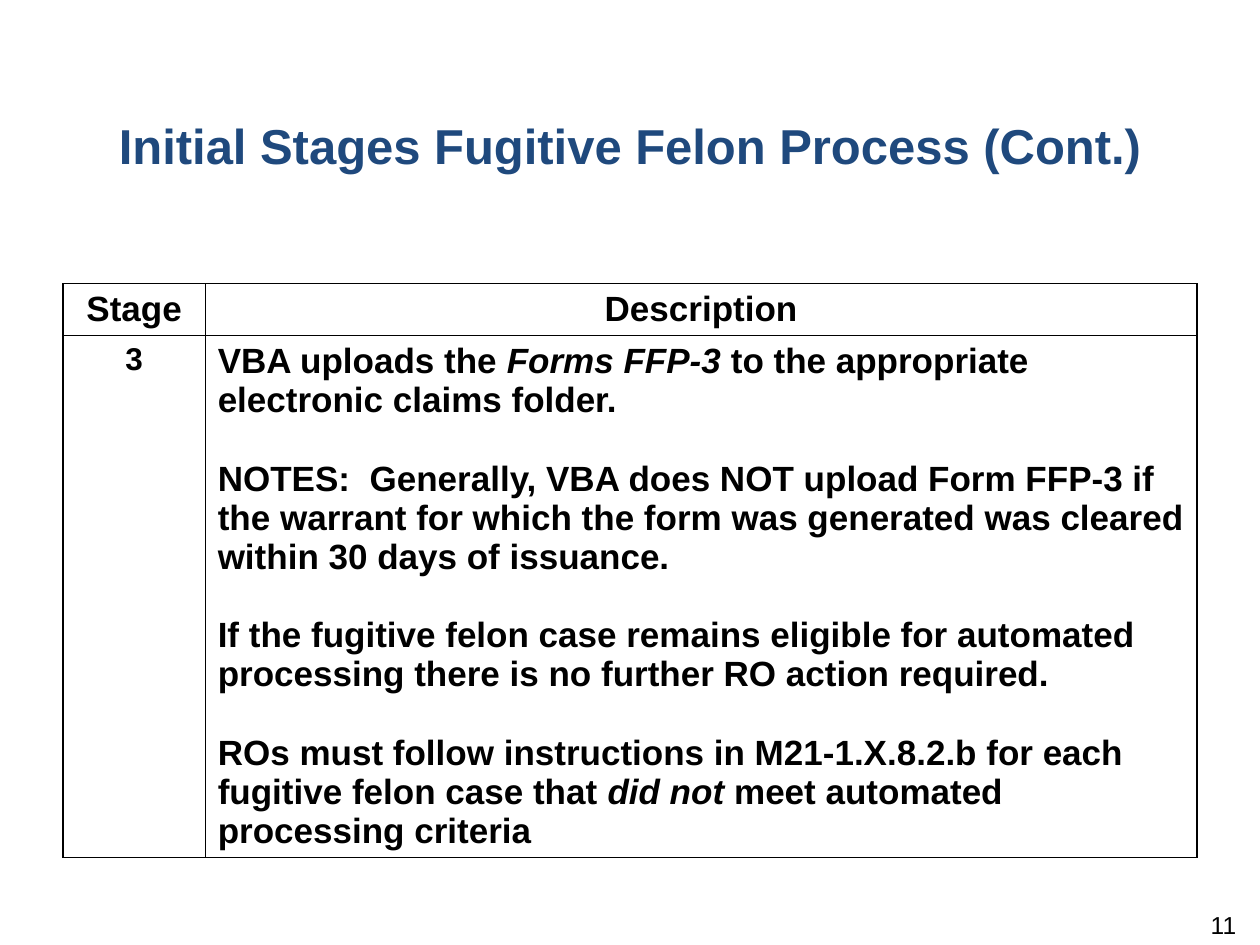
"""Build the slide on the third stage of the fugitive felon process."""
from lxml.etree import SubElement
from pptx import Presentation
from pptx.dml.color import RGBColor
from pptx.enum.text import MSO_ANCHOR, PP_ALIGN
from pptx.oxml.ns import qn
from pptx.util import Cm, Pt

NAVY = RGBColor(0x1F, 0x49, 0x7D)
BLACK = RGBColor(0, 0, 0)
WHITE = RGBColor(255, 255, 255)


def write(paragraph, text, size=20, color=BLACK, bold=True, italic=False, align=PP_ALIGN.LEFT):
    paragraph.alignment = align
    run = paragraph.add_run()
    run.text = text
    font = run.font
    font.name, font.size, font.bold, font.italic = "Arial", Pt(size), bold, italic
    font.color.rgb = color


def style_cell(cell):
    cell.margin_left = cell.margin_right = Cm(0.25)
    cell.margin_top = cell.margin_bottom = Cm(0.13)
    properties = cell._tc.get_or_add_tcPr()
    for side in ("a:lnL", "a:lnR", "a:lnT", "a:lnB"):
        line = SubElement(properties, qn(side), w=str(Pt(1)))
        fill = SubElement(line, qn("a:solidFill"))
        SubElement(fill, qn("a:srgbClr"), val=str(BLACK))
    cell.fill.solid()
    cell.fill.fore_color.rgb = WHITE


presentation = Presentation()
presentation.slide_width, presentation.slide_height = Cm(25.4), Cm(19.05)
slide = presentation.slides.add_slide(presentation.slide_layouts[5])

title = slide.shapes.title
title.left, title.top, title.width, title.height = Cm(0), Cm(2.21), Cm(25.4), Cm(3.02)
title.text_frame.vertical_anchor = MSO_ANCHOR.TOP
write(title.text_frame.paragraphs[0], "Initial Stages Fugitive Felon Process (Cont.)",
      size=28, color=NAVY, align=PP_ALIGN.CENTER)

table = slide.shapes.add_table(2, 2, Cm(1.27), Cm(5.72), Cm(22.86), Cm(11.53)).table
for column, width in zip(table.columns, (2.87, 19.99)):
    column.width = Cm(width)
for row, height in zip(table.rows, (1.04, 10.49)):
    row.height = Cm(height)
for cell in table.iter_cells():
    style_cell(cell)

for row, column, text, size in ((0, 0, "Stage", 20), (0, 1, "Description", 20), (1, 0, "3", 18)):
    write(table.cell(row, column).text_frame.paragraphs[0], text, size=size, align=PP_ALIGN.CENTER)

description = (
    (("VBA uploads the ", False), ("Forms FFP-3 ", True),
     ("to the appropriate electronic claims folder.", False)),
    (("NOTES:  Generally, VBA does NOT upload Form FFP-3 if the warrant for which "
      "the form was generated was cleared within 30 days of issuance.", False),),
    (("If the fugitive felon case remains eligible for automated processing "
      "there is no further RO action required.", False),),
    (("ROs must follow instructions in M21-1.X.8.2.b for each fugitive felon case that ", False),
     ("did not ", True), ("meet automated processing criteria", False)),
)
frame = table.cell(1, 1).text_frame
for index, parts in enumerate(description):
    paragraph = frame.add_paragraph() if index else frame.paragraphs[0]
    if index:
        paragraph.space_before = Pt(22.5)
    for text, italic in parts:
        write(paragraph, text, italic=italic)

number = slide.shapes.add_textbox(Cm(19.25), Cm(18.34), Cm(5.92), Cm(0.71)).text_frame
number.word_wrap = True
number.margin_top = 0
write(number.paragraphs[0], "11", size=14, bold=False, align=PP_ALIGN.RIGHT)

presentation.save("out.pptx")
